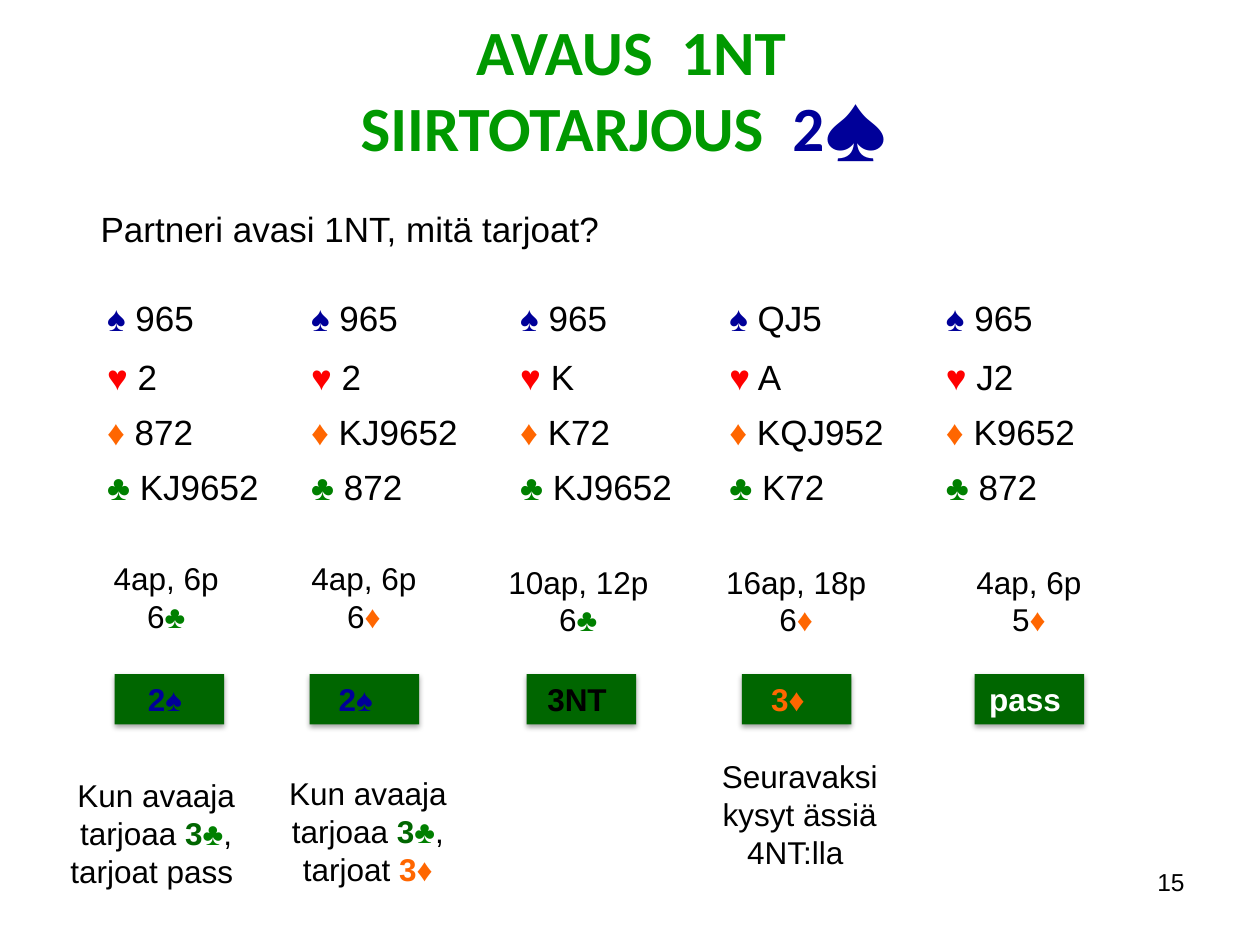
from collections import namedtuple
from dataclasses import dataclass

from lxml import etree
from pptx import Presentation
from pptx.dml.color import RGBColor
from pptx.enum.shapes import MSO_SHAPE
from pptx.enum.text import MSO_ANCHOR, PP_ALIGN
from pptx.oxml.ns import qn
from pptx.util import Pt

RECTANGLE = MSO_SHAPE.RECTANGLE
MIDDLE = MSO_ANCHOR.MIDDLE
LEFT, CENTER, RIGHT, JUSTIFY = PP_ALIGN.LEFT, PP_ALIGN.CENTER, PP_ALIGN.RIGHT, PP_ALIGN.JUSTIFY


@dataclass(frozen=True)
class Theme:
    heading_font: str = "Calibri"
    body_font: str = "Arial"
    title_size: float = 36
    hand_size: float = 20
    note_size: float = 18
    number_size: float = 14
    title: str = "009900"
    text: str = "000000"
    spade: str = "000099"
    heart: str = "FF0000"
    diamond: str = "FF6600"
    club: str = "008000"
    bid_fill: str = "006600"
    bid_light: str = "FFFFFF"


THEME = Theme()
Box = namedtuple("Box", "left top width height")
Run = namedtuple("Run", "text color bold", defaults=(THEME.text, False))
Hand = namedtuple("Hand", "cards points points_box bid bid_left bid_gap")

SPADE = Run("♠", THEME.spade)
HEART = Run("♥", THEME.heart)
DIAMOND = Run("♦", THEME.diamond)
CLUB = Run("♣", THEME.club)
SUITS = (SPADE, HEART, DIAMOND, CLUB)

TITLE = [Run("AVAUS  1NT\nSIIRTOTARJOUS  ", THEME.title, True), Run("2", THEME.spade, True),
         Run("♠ ", THEME.spade)]
TWO_SPADES = [Run("2", THEME.spade, True), SPADE]
CLUB_REPLY = [Run("Kun avaaja tarjoaa "), Run("3", THEME.bid_fill, True), CLUB]
COLUMN_WIDTHS = (116.6, 119.5, 119.5, 123.8, 121.7)
ROW_HEIGHTS = (33.8, 31, 28.8, 28.8)

HANDS = [
    Hand(("965", "2", "872", "KJ9652"), [Run("4ap, 6p\n6"), CLUB],
         Box(41, 316, 108, 51), TWO_SPADES, 65.5, 5),
    Hand(("965", "2", "KJ9652", "872"), [Run("4ap, 6p\n6"), DIAMOND],
         Box(154, 316, 108, 51), TWO_SPADES, 177, 10),
    Hand(("965", "K", "K72", "KJ9652"), [Run("10ap, 12p\n6"), CLUB],
         Box(276.5, 318, 108, 51), [Run("3NT", THEME.text, True)], 301, 5),
    Hand(("QJ5", "A", "KQJ952", "K72"), [Run("16ap, 18p\n6"), DIAMOND],
         Box(401, 318, 108, 51), [Run("3♦", THEME.diamond, True)], 424, 10),
    Hand(("965", "J2", "K9652", "872"), [Run("4ap, 6p\n5"), DIAMOND],
         Box(534, 318, 108, 51), [Run("pass", THEME.bid_light, True)], 557, 5),
]

REPLIES = [
    (Box(20, 440, 138.5, 73), CLUB_REPLY + [Run(", tarjoat pass ")]),
    (Box(149, 439, 122.5, 73),
     CLUB_REPLY + [Run(", tarjoat "), Run("3", THEME.diamond, True), DIAMOND]),
    (Box(404, 429, 106, 73), [Run("Seuravaksi kysyt ässiä 4NT:lla ")]),
]


def points(box):
    return [Pt(value) for value in box]


def write(text_frame, runs, size, alignment, font=THEME.body_font):
    text_frame.word_wrap = True
    paragraph = text_frame.paragraphs[0]
    paragraph.alignment = alignment
    for text, color, bold in runs:
        for index, line in enumerate(text.split("\n")):
            if index:
                paragraph.add_line_break()
            run = paragraph.add_run()
            run.text = line
            run.font.name = font
            run.font.size = Pt(size)
            run.font.bold = bold
            run.font.color.rgb = RGBColor.from_string(color)


def add_text(slide, box, runs, size, alignment, font=THEME.body_font):
    text_box = slide.shapes.add_textbox(*points(box))
    write(text_box.text_frame, runs, size, alignment, font)


def add_hands(slide, box):
    table = slide.shapes.add_table(len(SUITS), len(HANDS), *points(box)).table
    table.first_row = table.horz_banding = False
    for column, width in zip(table.columns, COLUMN_WIDTHS):
        column.width = Pt(width)
    for row, height in zip(table.rows, ROW_HEIGHTS):
        row.height = Pt(height)
    for column_index, hand in enumerate(HANDS):
        for row_index, (suit, cards) in enumerate(zip(SUITS, hand.cards)):
            cell = table.cell(row_index, column_index)
            cell.fill.background()
            write(cell.text_frame, [suit, Run(" " + cards)], THEME.hand_size, JUSTIFY)


def add_shadow(shape):
    shape.shadow.inherit = False
    effects = shape._element.spPr.find(qn("a:effectLst"))
    shadow = etree.SubElement(effects, qn("a:outerShdw"), blurRad=str(Pt(3.1)),
                              dist=str(Pt(1.8)), dir="5400000", rotWithShape="0")
    color = etree.SubElement(shadow, qn("a:srgbClr"), val=THEME.text)
    etree.SubElement(color, qn("a:alpha"), val="35000")


def add_bid(slide, box, runs, gap):
    shape = slide.shapes.add_shape(RECTANGLE, *points(box))
    shape.fill.solid()
    shape.fill.fore_color.rgb = RGBColor.from_string(THEME.bid_fill)
    shape.line.fill.background()
    add_shadow(shape)
    shape.text_frame.vertical_anchor = MIDDLE
    shape.text_frame.margin_right = Pt(7.2 + gap)
    write(shape.text_frame, runs, THEME.note_size, CENTER)


def add_answers(slide, box):
    for hand in HANDS:
        add_text(slide, hand.points_box, hand.points, THEME.note_size, CENTER)
        bid_box = box._replace(left=hand.bid_left)
        add_bid(slide, bid_box, hand.bid, hand.bid_gap)


def main():
    presentation = Presentation()
    presentation.slide_width, presentation.slide_height = Pt(720), Pt(540)
    slide = presentation.slides.add_slide(presentation.slide_layouts[6])
    add_text(slide, Box(8.6, 3.6, 704, 94.3), TITLE, THEME.title_size, CENTER,
             THEME.heading_font)
    add_hands(slide, Box(54, 167.8, sum(COLUMN_WIDTHS), sum(ROW_HEIGHTS)))
    add_text(slide, Box(50.4, 115.2, 512.6, 31.7),
             [Run("Partneri avasi 1NT, mitä tarjoat?")], THEME.hand_size, LEFT)
    add_answers(slide, Box(65.5, 385.2, 62.6, 28.8))
    for box, runs in REPLIES:
        add_text(slide, box, runs, THEME.note_size, CENTER)
    add_text(slide, Box(516, 491.8, 168, 37.4), [Run("15")], THEME.number_size, RIGHT)
    presentation.save("out.pptx")


if __name__ == "__main__":
    main()
